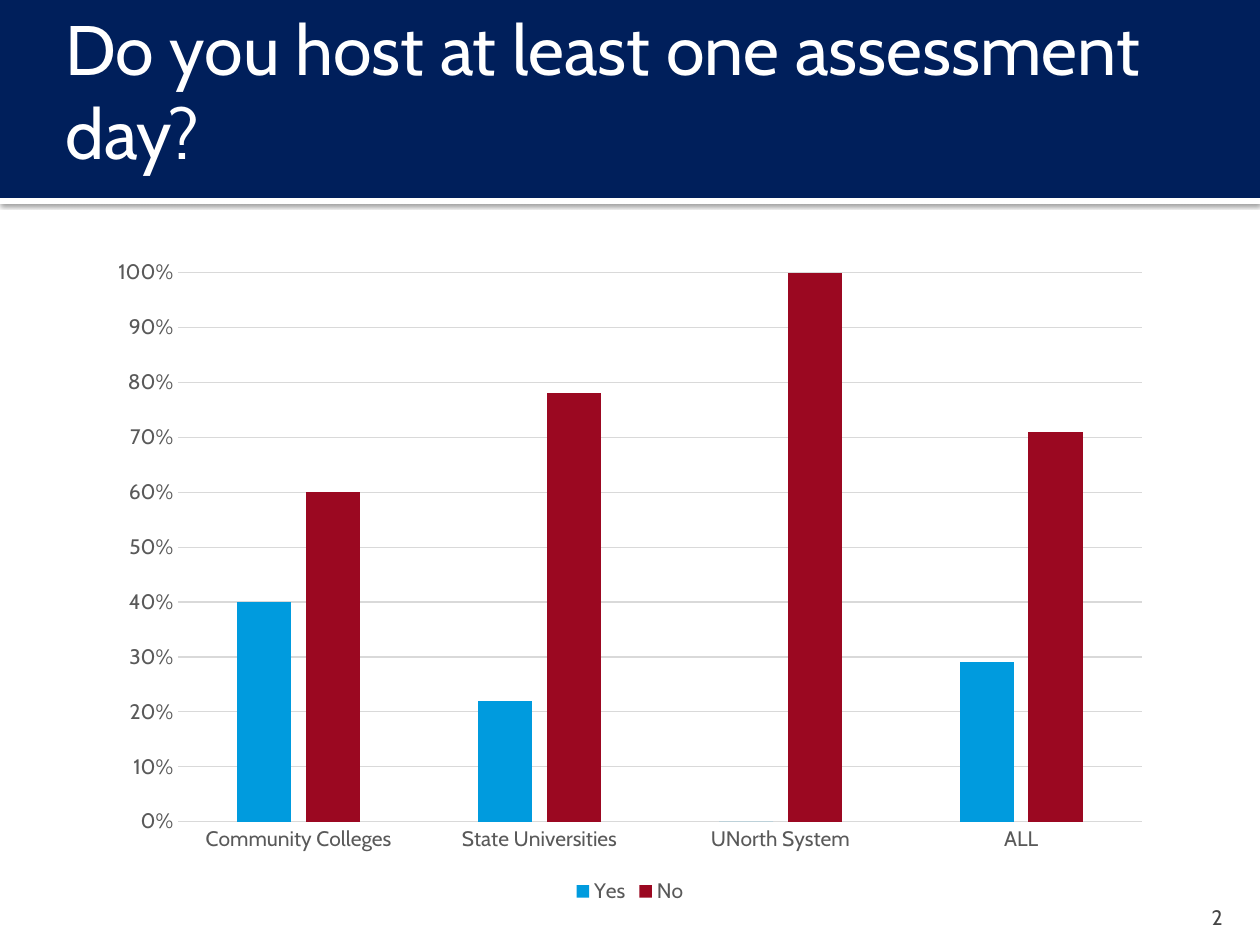
import lxml.etree
import pptx
import pptx.chart.data
import pptx.dml.color
import pptx.enum.chart
import pptx.enum.shapes
import pptx.enum.text
import pptx.oxml
import pptx.oxml.ns
import pptx.util

PX = 914400 / 126
FONT = "Cabin"
WHITE, NAVY, GREY, RULE = "FFFFFF", "001F5B", "595959", "D9D9D9"
CATEGORIES = ["Community Colleges", "State Universities", "UNorth System", "ALL"]
SERIES = [
    ("Yes", "009BDE", [0.4, 0.22, 0, 0.29]),
    ("No", "9B0821", [0.6, 0.78, 1, 0.71]),
]


def px(length):
    return pptx.util.Emu(round(length * PX))


def color(value):
    return pptx.dml.color.RGBColor.from_string(value)


def assign(target, values):
    for name, value in values.items():
        setattr(target, name, value)


def style_font(font, size, hex_color):
    assign(font, {"name": FONT, "size": pptx.util.Pt(size), "bold": False})
    font.color.rgb = color(hex_color)


def style_line(line, hex_color):
    line.width = pptx.util.Pt(0.75)
    line.color.rgb = color(hex_color)


def add_band(page, box, fill):
    band = page.shapes.add_shape(
        pptx.enum.shapes.MSO_SHAPE.RECTANGLE, *map(px, box))
    band.shadow.inherit = False
    band.fill.solid()
    band.fill.fore_color.rgb = color(fill)
    band.line.fill.background()
    return band


def add_drop_shadow(shape):
    effects = shape._element.spPr.find(pptx.oxml.ns.qn("a:effectLst"))
    effects.append(pptx.oxml.parse_xml(
        f'<a:outerShdw {pptx.oxml.ns.nsdecls("a")} blurRad="31750" dist="10160" '
        'dir="5400000" algn="t" rotWithShape="0">'
        '<a:srgbClr val="000000"><a:alpha val="60000"/></a:srgbClr></a:outerShdw>'))


def add_text(page, box, text, size, hex_color, frame_format, align):
    frame = page.shapes.add_textbox(*map(px, box)).text_frame
    assign(frame, {"word_wrap": True, **frame_format})
    para = frame.paragraphs[0]
    para.alignment = align
    span = para.add_run()
    span.text = text
    style_font(span.font, size, hex_color)


def add_header(page, box, title):
    left, top, width, height = box
    rule = add_band(page, (left, top + height, width, 6), WHITE)
    add_drop_shadow(rule)
    add_band(page, box, NAVY)
    add_text(page, (left + 53, top + 32, width - 105, 116), title, 40, WHITE,
             {"vertical_anchor": pptx.enum.text.MSO_ANCHOR.MIDDLE,
              "margin_right": pptx.util.Inches(0.05)},
             pptx.enum.text.PP_ALIGN.LEFT)


def add_page_number(page, box, number):
    add_text(page, box, str(number), 12, "454545",
             {"vertical_anchor": pptx.enum.text.MSO_ANCHOR.BOTTOM,
              "margin_bottom": 0},
             pptx.enum.text.PP_ALIGN.RIGHT)


def add_answer_chart(page, box):
    data = pptx.chart.data.CategoryChartData(number_format="0%")
    data.categories = CATEGORIES
    for name, _, values in SERIES:
        data.add_series(name, values)
    chart = page.shapes.add_chart(
        pptx.enum.chart.XL_CHART_TYPE.COLUMN_CLUSTERED,
        *map(px, box), data).chart
    assign(chart, {"has_title": False, "has_legend": True})
    style_font(chart.font, 10, "000000")
    assign(chart.legend, {
        "position": pptx.enum.chart.XL_LEGEND_POSITION.BOTTOM,
        "include_in_layout": False})
    style_font(chart.legend.font, 12, GREY)

    plot = chart.plots[0]
    assign(plot, {"gap_width": 219, "overlap": -27, "vary_by_categories": False})
    for series, (_, fill, _) in zip(plot.series, SERIES):
        series.invert_if_negative = False
        series.format.fill.solid()
        series.format.fill.fore_color.rgb = color(fill)

    no_tick = pptx.enum.chart.XL_TICK_MARK.NONE
    for axis in (chart.category_axis, chart.value_axis):
        assign(axis, {"major_tick_mark": no_tick, "minor_tick_mark": no_tick})
        style_font(axis.tick_labels.font, 12, GREY)
    style_line(chart.category_axis.format.line, RULE)
    values = chart.value_axis
    assign(values, {"minimum_scale": 0, "maximum_scale": 1, "major_unit": 0.1,
                    "has_major_gridlines": True})
    assign(values.tick_labels, {"number_format": "0%",
                                "number_format_is_linked": False})
    values.format.line.fill.background()
    style_line(values.major_gridlines.format.line, RULE)


def main():
    deck = pptx.Presentation()
    assign(deck, {"slide_width": px(1260), "slide_height": px(945)})
    page = deck.slides.add_slide(deck.slide_layouts[6])
    page.background.fill.solid()
    page.background.fill.fore_color.rgb = color(WHITE)
    add_header(page, (0, 0, 1260, 198), "Do you host at least one assessment day?")
    add_page_number(page, (1134, 892, 101, 38), 2)
    add_answer_chart(page, (97, 247, 1066, 662))
    deck.save("out.pptx")


if __name__ == "__main__":
    main()
